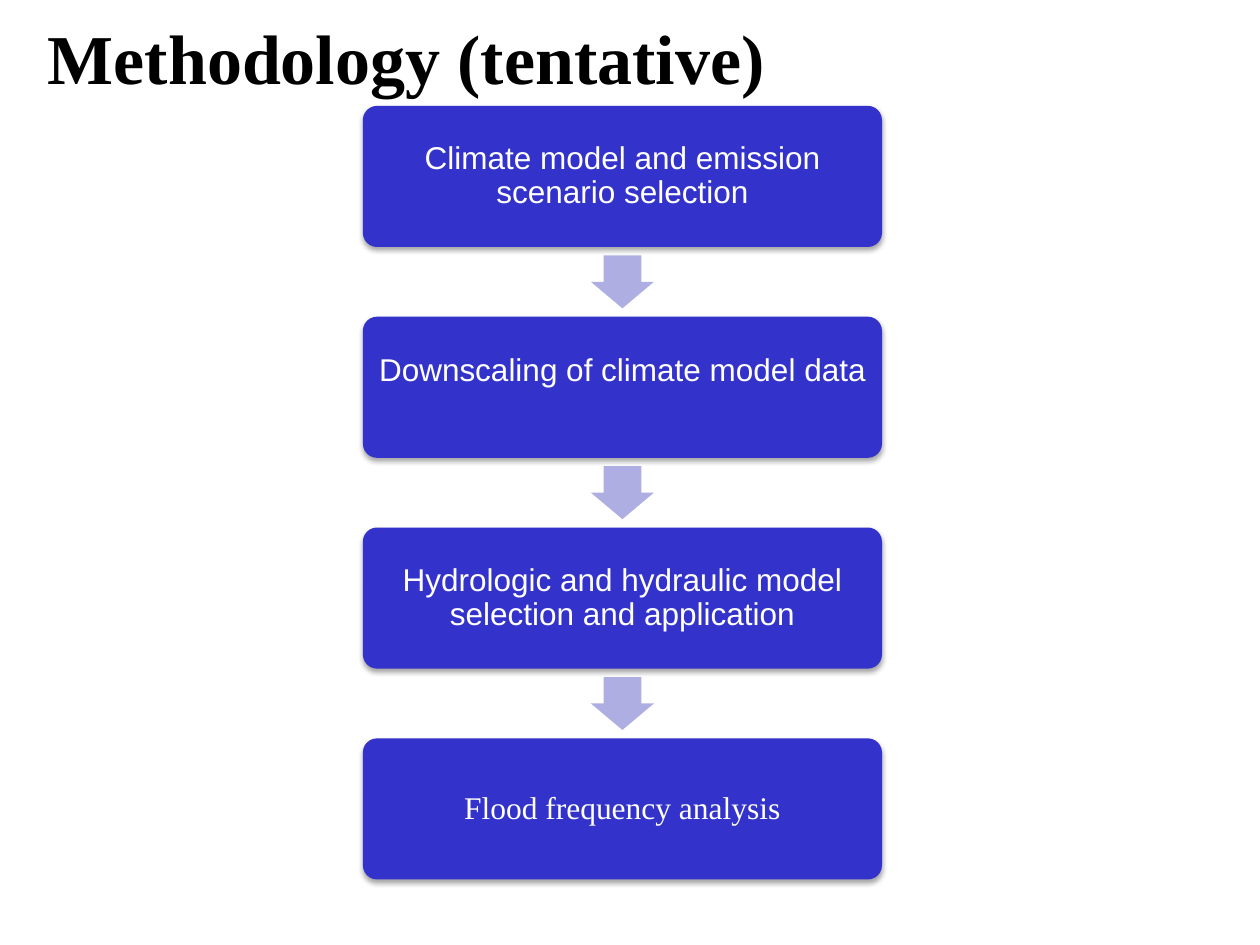
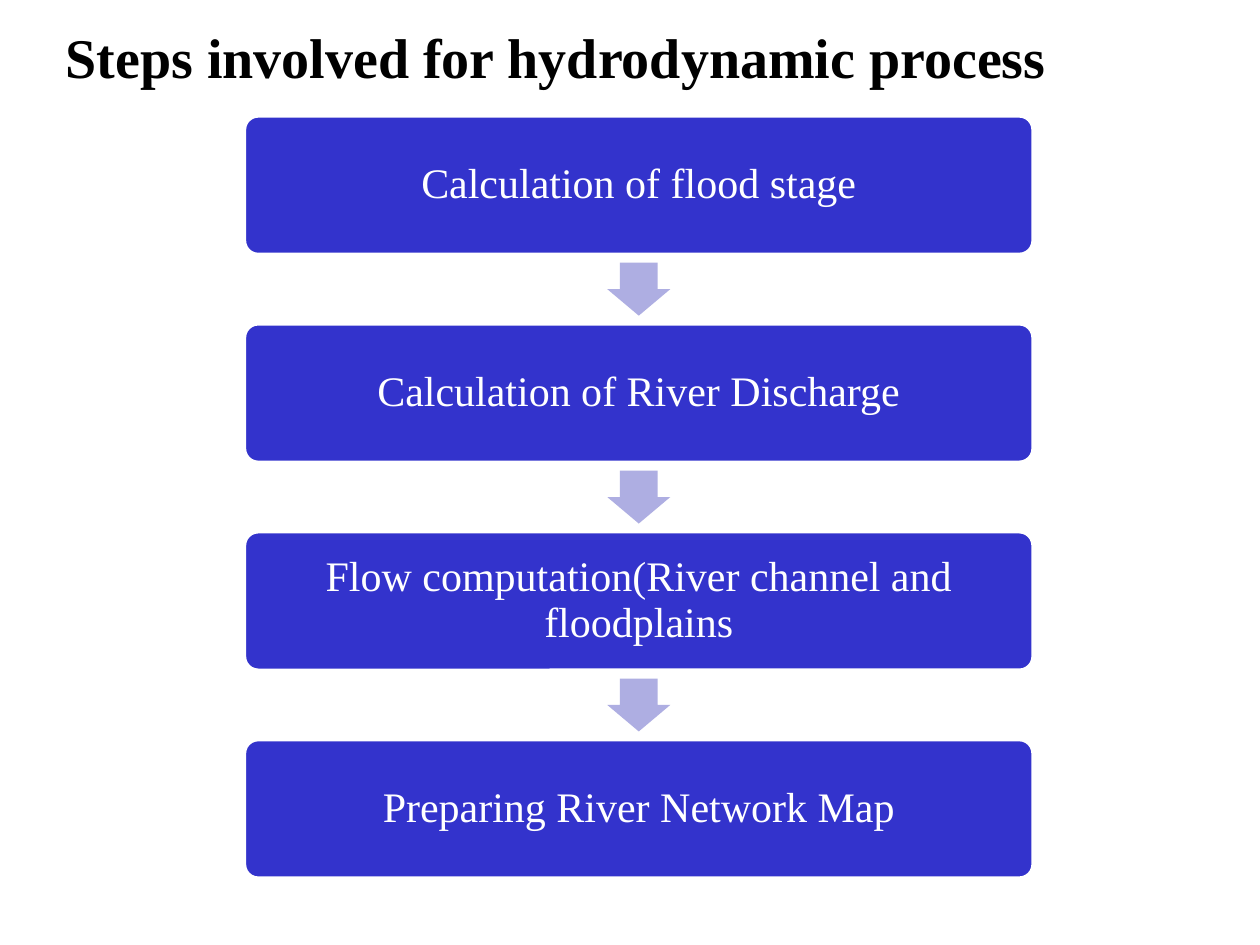
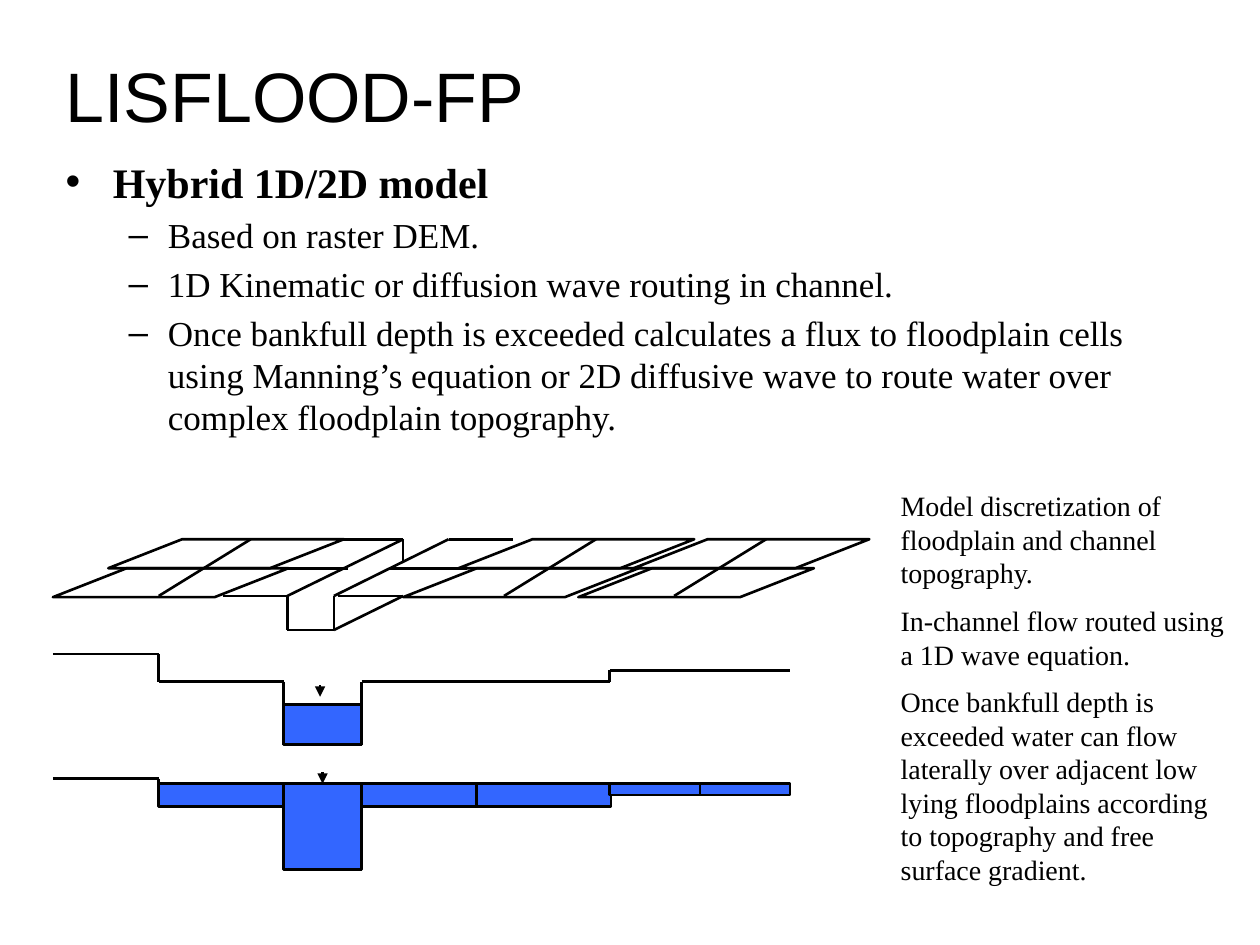
import dataclasses
import itertools

import pptx
import pptx.dml.color
import pptx.enum.shapes
import pptx.enum.text
import pptx.oxml
import pptx.oxml.ns
import pptx.util

Inches = pptx.util.Inches
Pt = pptx.util.Pt
Shapes = pptx.enum.shapes.MSO_SHAPE


@dataclasses.dataclass(frozen=True)
class Theme:
    sans: str = "Arial"
    serif: str = "Times New Roman"
    ink: str = "000000"
    paper: str = "FFFFFF"
    step: str = "3333CC"
    arrow: str = "AEAEE2"
    water: str = "3366FF"
    title_size: int = 40
    long_title_size: int = 32
    heading_size: int = 24
    list_size: int = 20
    caption_size: int = 16
    drawing_line: float = 1.5


@dataclasses.dataclass(frozen=True)
class Box:
    left: float
    top: float
    width: float
    height: float

    def lengths(self):
        return [Inches(value) for value in dataclasses.astuple(self)]

    def inner(self, left, top, width, height):
        return Box(self.left + left, self.top + top, width, height)


@dataclasses.dataclass(frozen=True)
class Step:
    text: str
    font: str
    lift: float = 0


@dataclasses.dataclass(frozen=True)
class FlowStyle:
    step_height: float
    text_size: int
    inset: float
    shadow: bool = False
    outline: float = 0


THEME = Theme()
METHOD_STYLE = FlowStyle(step_height=1.12, text_size=18, inset=0.07, shadow=True)
PROCESS_STYLE = FlowStyle(step_height=1.1, text_size=24, inset=0.1, outline=2)


def color(value):
    return pptx.dml.color.RGBColor.from_string(value)


def format_runs(paragraph, size, font, ink=THEME.ink, bold=False):
    for run in paragraph.runs:
        run.font.size = Pt(size)
        run.font.name = font
        run.font.bold = bold
        run.font.color.rgb = color(ink)


def add_preset(slide, kind, box, fill=None, line=None, line_width=THEME.drawing_line):
    shape = slide.shapes.add_shape(kind, *box.lengths())
    shape.shadow.inherit = False
    if fill:
        shape.fill.solid()
        shape.fill.fore_color.rgb = color(fill)
    else:
        shape.fill.background()
    if line:
        shape.line.color.rgb = color(line)
        shape.line.width = Pt(line_width)
    else:
        shape.line.fill.background()
    return shape


def add_soft_shadow(shape):
    effects = shape._element.spPr.find(pptx.oxml.ns.qn("a:effectLst"))
    effects.append(pptx.oxml.parse_xml(
        f'<a:outerShdw {pptx.oxml.ns.nsdecls("a")} blurRad="{Pt(3.1)}" dist="{Pt(1.8)}" '
        f'dir="5400000" rotWithShape="0"><a:srgbClr val="{THEME.ink}">'
        '<a:alpha val="35000"/></a:srgbClr></a:outerShdw>'))


def add_line(slide, box, start, end):
    points = [Inches(offset + value)
              for point in (start, end)
              for offset, value in zip((box.left, box.top), point)]
    connector = slide.shapes.add_connector(pptx.enum.shapes.MSO_CONNECTOR.STRAIGHT, *points)
    connector.line.color.rgb = color(THEME.ink)
    connector.line.width = Pt(THEME.drawing_line)
    connector._element.spPr.append(pptx.oxml.parse_xml(
        f'<a:effectLst {pptx.oxml.ns.nsdecls("a")}/>'))
    return connector


def add_path(slide, box, points):
    for start, end in itertools.pairwise(points):
        add_line(slide, box, start, end)


def add_level_marker(slide, box, x, y):
    marker = add_line(slide, box, (x, y), (x, y + 0.09))
    marker.line._get_or_add_ln().append(pptx.oxml.parse_xml(
        f'<a:tailEnd {pptx.oxml.ns.nsdecls("a")} type="triangle"/>'))
    return marker


def place_title(slide, box, text, size, font, bold):
    title = slide.shapes.title
    title.left, title.top, title.width, title.height = box.lengths()
    frame = title.text_frame
    frame.text = text
    frame.auto_size = pptx.enum.text.MSO_AUTO_SIZE.NONE
    frame.vertical_anchor = pptx.enum.text.MSO_ANCHOR.MIDDLE
    frame.paragraphs[0].alignment = pptx.enum.text.PP_ALIGN.LEFT
    format_runs(frame.paragraphs[0], size, font, bold=bold)


def place_list(slide, box, heading, items):
    body = slide.placeholders[1]
    body.left, body.top, body.width, body.height = box.lengths()
    frame = body.text_frame
    frame.auto_size = pptx.enum.text.MSO_AUTO_SIZE.NONE
    frame.margin_top = Inches(0.09)
    frame.text = heading
    frame.paragraphs[0].space_before = Pt(0)
    format_runs(frame.paragraphs[0], THEME.heading_size, THEME.serif, bold=True)
    for item in items:
        paragraph = frame.add_paragraph()
        paragraph.text = item
        paragraph.level = 1
        format_runs(paragraph, THEME.list_size, THEME.serif)


def draw_step(slide, box, step, style):
    shape = add_preset(slide, Shapes.ROUNDED_RECTANGLE, box, THEME.step,
                       THEME.paper if style.outline else None, style.outline)
    shape.adjustments[0] = 0.1
    if style.shadow:
        add_soft_shadow(shape)
    frame = shape.text_frame
    frame.word_wrap = True
    frame.vertical_anchor = pptx.enum.text.MSO_ANCHOR.MIDDLE
    frame.margin_left = frame.margin_right = frame.margin_top = Inches(style.inset)
    frame.margin_bottom = Inches(style.inset + step.lift)
    frame.text = step.text
    paragraph = frame.paragraphs[0]
    paragraph.alignment = pptx.enum.text.PP_ALIGN.CENTER
    paragraph.line_spacing = 0.9
    format_runs(paragraph, style.text_size, step.font, THEME.paper)


def draw_flow(slide, box, steps, style):
    arrow_width, arrow_height = 0.5, 0.42
    pitch = (box.height - style.step_height) / (len(steps) - 1)
    gap = pitch - style.step_height
    for index, step in enumerate(steps):
        top = index * pitch
        if index:
            arrow = add_preset(
                slide, Shapes.DOWN_ARROW,
                box.inner((box.width - arrow_width) / 2, top - (gap + arrow_height) / 2,
                          arrow_width, arrow_height),
                THEME.arrow)
            arrow.adjustments[0] = 0.6
            arrow.adjustments[1] = 0.5
        draw_step(slide, box.inner(0, top, box.width, style.step_height), step, style)


def draw_floodplain_mesh(slide, box):
    row_height = 0.23
    for row_left, row_top in ((0, row_height), (0.44, 0)):
        for cell_left in (0, 2.78, 4.17):
            cells = add_preset(slide, Shapes.PARALLELOGRAM,
                               box.inner(row_left + cell_left, row_top, 1.87, row_height),
                               line=THEME.ink)
            cells.adjustments[0] = 2.55
    for divider in (0.84, 3.58, 4.93):
        add_line(slide, box, (divider, 0.45), (divider + 0.73, 0))
    channel_paths = (
        ((1.35, 0.45), (1.86, 0.45), (2.78, 0), (2.26, 0)),
        ((2.78, 0), (2.78, 0.18)),
        ((2.26, 0.45), (2.78, 0.45)),
        ((2.23, 0.45), (3.14, 0), (3.65, 0)),
        ((1.86, 0.23), (2.34, 0.23)),
        ((2.67, 0.23), (3.29, 0.23)),
        ((1.86, 0.45), (1.86, 0.72), (2.23, 0.72), (2.23, 0.45)),
        ((2.23, 0.72), (2.78, 0.45)),
    )
    for points in channel_paths:
        add_path(slide, box, points)


def draw_ground_profile(slide, box):
    add_path(slide, box, (
        (0, 0), (0.84, 0), (0.84, 0.22), (1.83, 0.22), (1.83, 0.72),
        (2.45, 0.72), (2.45, 0.22), (4.42, 0.22), (4.42, 0.13), (5.85, 0.13)))


def draw_water(slide, box, left, top, width, height):
    return add_preset(slide, Shapes.RECTANGLE, box.inner(left, top, width, height),
                      THEME.water, THEME.ink)


def draw_in_channel_section(slide, box):
    draw_ground_profile(slide, box)
    draw_water(slide, box, 1.83, 0.4, 0.62, 0.32)
    add_level_marker(slide, box, 2.12, 0.25)


def draw_flooded_section(slide, box):
    draw_ground_profile(slide, box)
    channel = draw_water(slide, box, 1.83, 0.04, 0.62, 0.68)
    draw_water(slide, box, 0.84, 0.04, 0.99, 0.18)
    draw_water(slide, box, 2.45, 0.04, 1.98, 0.18)
    terrace = draw_water(slide, box, 4.42, 0.04, 1.43, 0.09)
    add_line(slide, box, (3.36, 0.04), (3.36, 0.22))
    terrace_divider = add_line(slide, box, (5.14, 0.04), (5.14, 0.13))
    terrace_divider.begin_connect(terrace, 0)
    terrace_divider.end_connect(terrace, 2)
    add_level_marker(slide, box, 2.14, -0.05).end_connect(channel, 0)


def place_captions(slide, box, captions):
    frame = slide.shapes.add_textbox(*box.lengths()).text_frame
    frame.word_wrap = True
    frame.text = "\n".join(captions)
    for index, paragraph in enumerate(frame.paragraphs):
        paragraph.space_before = Pt(THEME.caption_size / 2 if index else 0)
        format_runs(paragraph, THEME.caption_size, THEME.serif)


def build_flow_slide(presentation, title, title_box, title_size, flow_box, steps, style):
    slide = presentation.slides.add_slide(presentation.slide_layouts[5])
    place_title(slide, title_box, title, title_size, THEME.serif, bold=True)
    draw_flow(slide, flow_box, steps, style)


def build_model_slide(presentation):
    slide = presentation.slides.add_slide(presentation.slide_layouts[1])
    place_title(slide, Box(0.42, 0.42, 9.17, 0.66), "LISFLOOD-FP",
                THEME.title_size, THEME.sans, bold=False)
    place_list(slide, Box(0.42, 1.15, 9.17, 5.52), "Hybrid 1D/2D model", (
        "Based on raster DEM.",
        "1D Kinematic or diffusion wave routing in channel.",
        "Once bankfull depth is exceeded calculates a flux to floodplain cells using "
        "Manning’s equation or 2D diffusive wave to route water over complex "
        "floodplain topography.",
    ))
    draw_floodplain_mesh(slide, Box(0.42, 4.28, 6.48, 0.72))
    draw_in_channel_section(slide, Box(0.42, 5.19, 5.85, 0.72))
    draw_flooded_section(slide, Box(0.42, 6.18, 5.85, 0.72))
    place_captions(slide, Box(7.05, 3.83, 2.83, 3.33), (
        "Model discretization of floodplain and channel topography.",
        "In-channel flow routed using a 1D wave equation.",
        "Once bankfull depth is exceeded water can flow laterally over adjacent low "
        "lying floodplains according to topography and free surface gradient.",
    ))


def main():
    presentation = pptx.Presentation()
    presentation.slide_width = Inches(10)
    presentation.slide_height = Inches(7.5)
    build_flow_slide(
        presentation, "Methodology (tentative)", Box(0.28, 0.05, 9.31, 0.79),
        THEME.title_size, Box(2.88, 0.84, 4.12, 6.14), (
            Step("Climate model and emission scenario selection", THEME.sans),
            Step("Downscaling of climate model data", THEME.sans, lift=0.25),
            Step("Hydrologic and hydraulic model selection and application", THEME.sans),
            Step("Flood frequency analysis", THEME.serif),
        ), METHOD_STYLE)
    process_steps = (
        "Calculation of flood stage",
        "Calculation of River Discharge",
        "Flow computation(River channel and floodplains",
        "Preparing River Network Map",
    )
    build_flow_slide(
        presentation, "Steps involved for hydrodynamic process", Box(0.42, 0.05, 9.17, 0.79),
        THEME.long_title_size, Box(1.94, 0.92, 6.26, 6.05),
        [Step(text, THEME.serif) for text in process_steps], PROCESS_STYLE)
    build_model_slide(presentation)
    presentation.save("out.pptx")


if __name__ == "__main__":
    main()
